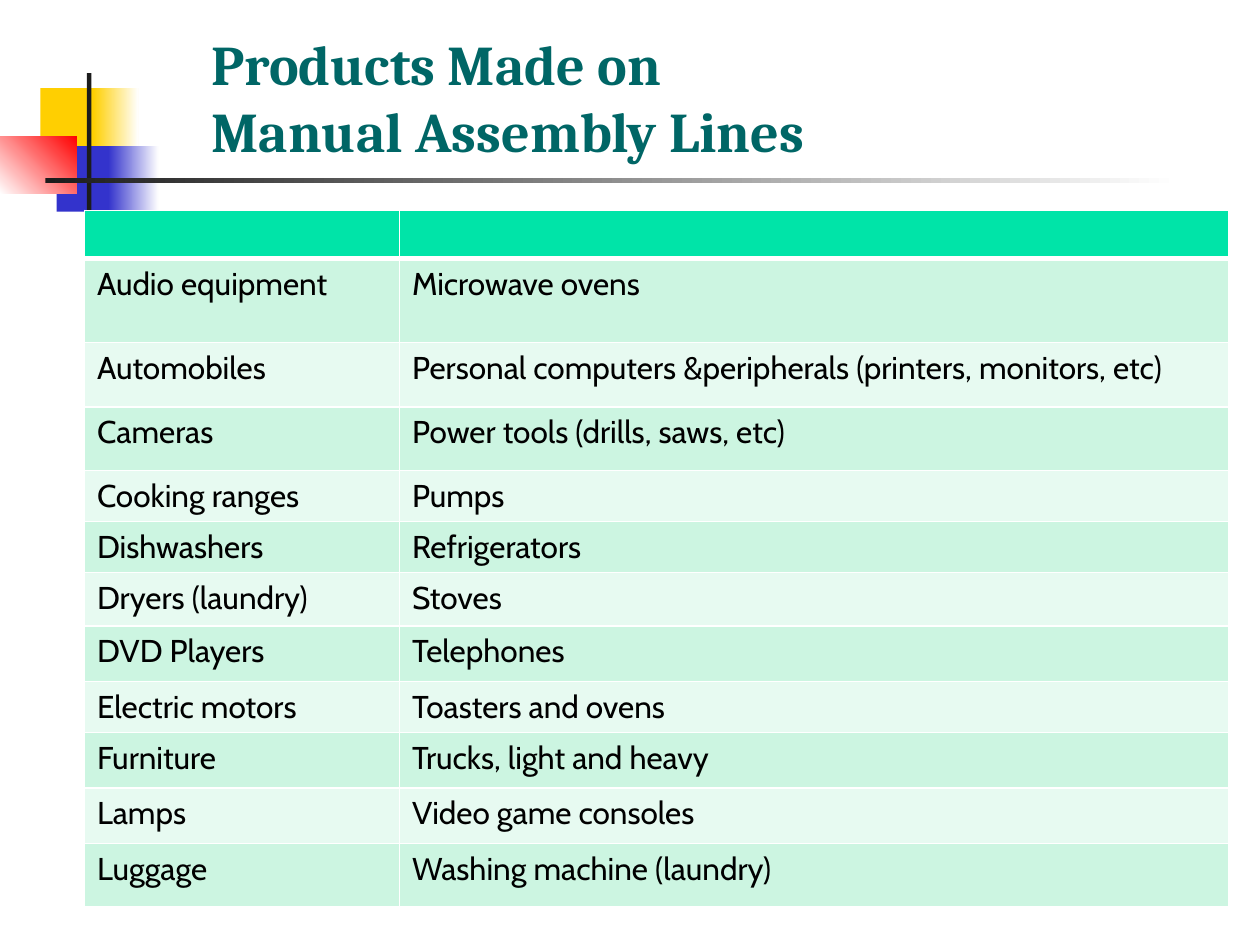
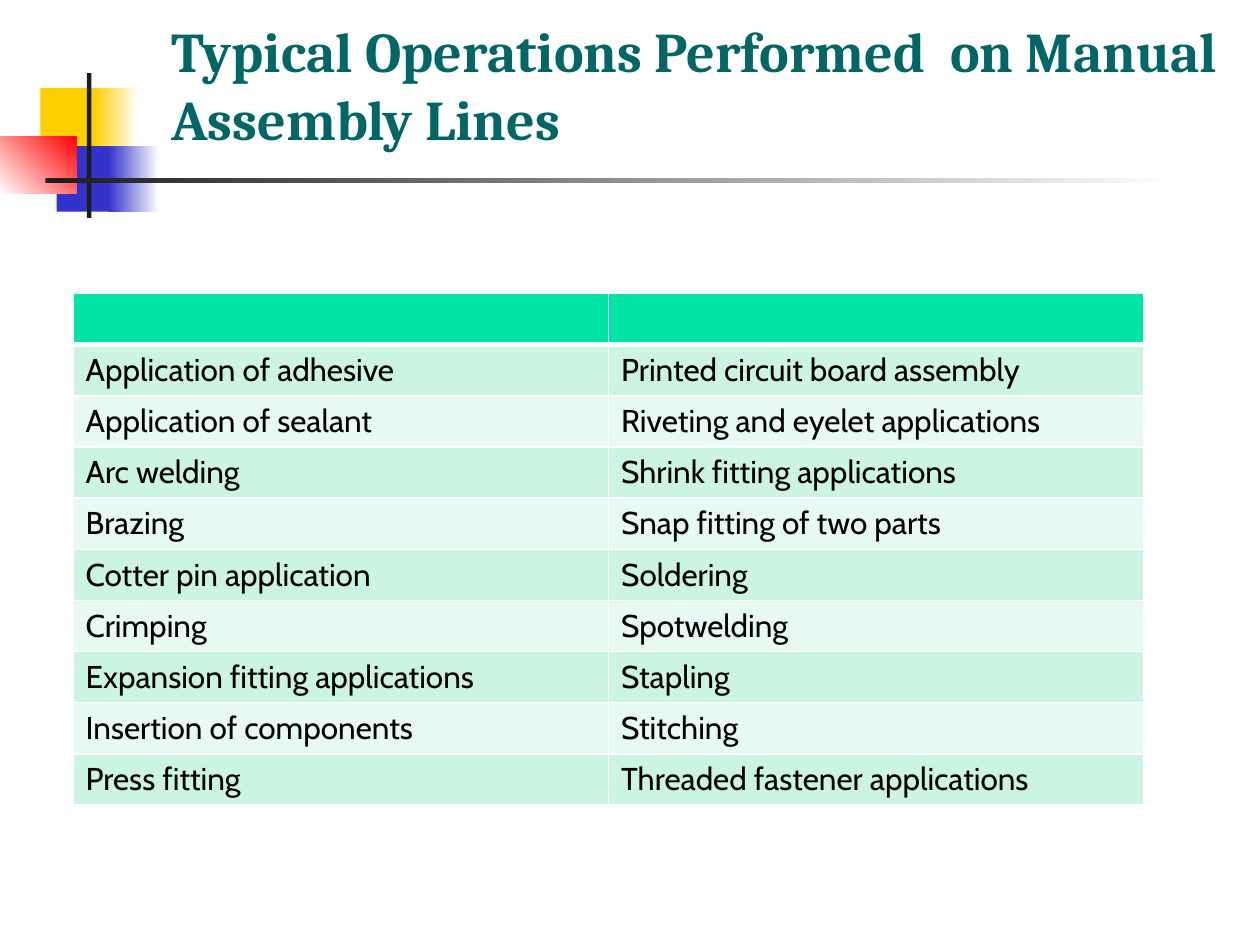
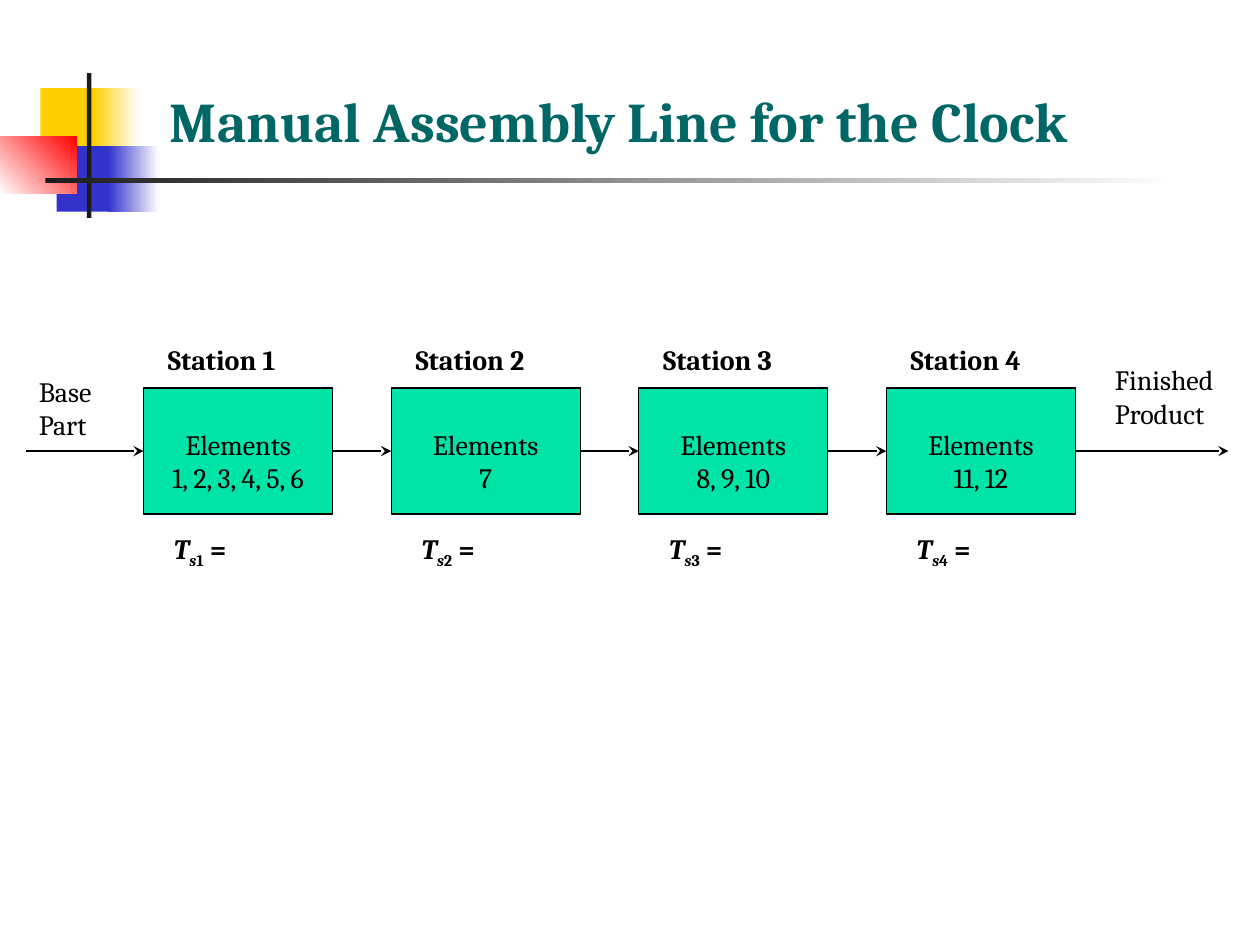
from lxml import etree
from pptx import Presentation
from pptx import util as u
from pptx.dml.color import RGBColor
from pptx.enum import shapes, text
from pptx.oxml import ns

BLACK, WHITE, INK = "000000", "FFFFFF", "1C1C1C"
GOLD, BLUE, RED = "FFCF01", "3333CC", "FF0000"
TEAL, GREEN, BANDS = "006666", "00E4A8", ("CCF5E1", "E7FAF1")
SERIF, SANS = "Cambria", "Cabin"

DECOR = [
    ((3.2, 7, 4.8, 5.2), (GOLD,), 0),
    ((7.4, 7, 3.6, 5.2), (GOLD, WHITE), 0),
    ((4.5, 11.6, 4.6, 5.2), (BLUE,), 0),
    ((8.6, 11.6, 4, 5.2), (BLUE, WHITE), 0),
    ((0, 10.8, 6.1, 4.6), (WHITE, RED), 45),
    ((6.9, 5.8, 0.35, 11.5), (INK,), 0),
    ((3.6, 14.15, 90, 0.35), (INK, WHITE), 0),
]

GOODS = [
    ("Audio equipment", "Microwave ovens"),
    ("Automobiles", "Personal computers &peripherals (printers, monitors, etc)"),
    ("Cameras", "Power tools (drills, saws, etc)"),
    ("Cooking ranges", "Pumps"),
    ("Dishwashers", "Refrigerators"),
    ("Dryers (laundry)", "Stoves"),
    ("DVD Players", "Telephones"),
    ("Electric motors", "Toasters and ovens"),
    ("Furniture", "Trucks, light and heavy"),
    ("Lamps", "Video game consoles"),
    ("Luggage", "Washing machine (laundry)"),
]

TASKS = [
    ("Application of adhesive", "Printed circuit board assembly"),
    ("Application of sealant", "Riveting and eyelet applications"),
    ("Arc welding", "Shrink fitting applications"),
    ("Brazing", "Snap fitting of two parts"),
    ("Cotter pin application", "Soldering"),
    ("Crimping", "Spotwelding"),
    ("Expansion fitting applications", "Stapling"),
    ("Insertion of components", "Stitching"),
    ("Press fitting", "Threaded fastener applications"),
]

STEPS = ["1, 2, 3, 4, 5, 6", "7", "8, 9, 10", "11, 12"]


def rgb(code):
    """Turn a hex string into a colour."""
    return RGBColor.from_string(code)


def grid(*cells):
    """Turn grid cells, 100 columns by 75 rows, into lengths."""
    return [u.Inches(cell / 10) for cell in cells]


def sub(node, tag, **attrs):
    """Append a drawing element to a node."""
    return etree.SubElement(node, ns.qn("a:" + tag), **attrs)


def write(para, words, size=16, font=SERIF, color=BLACK, bold=False,
          slant=False, base=0):
    """Add a run of text with its format to a paragraph."""
    run = para.add_run()
    run.text = words
    face = run.font
    face.size, face.name = u.Pt(size), font
    face.bold, face.italic = bold, slant
    face.color.rgb = rgb(color)
    if base:
        face._element.set("baseline", str(base * 1000))


def lines(frame, words, align=None, **form):
    """Write each line of the words as a paragraph."""
    for i, line in enumerate(words.split("\n")):
        para = frame.add_paragraph() if i else frame.paragraphs[0]
        para.alignment = align
        write(para, line, **form)


def border(cell, foot):
    """Give a cell white edges, with its own foot width."""
    props = cell._tc.get_or_add_tcPr()
    for i, (side, width) in enumerate(
            [("lnL", 1), ("lnR", 1), ("lnT", 1), ("lnB", foot)]):
        edge = etree.Element(ns.qn("a:" + side), w=str(u.Pt(width)))
        sub(sub(edge, "solidFill"), "srgbClr", val=WHITE)
        props.insert(i, edge)


class Deck:
    """Hold the style and the current slide."""

    def __init__(self):
        """Start an empty deck."""
        self.show = Presentation()
        self.show.slide_width, self.show.slide_height = grid(100, 75)

    def page(self, title, at):
        """Add a slide with the shared marks and a title."""
        self.slide = self.show.slides.add_slide(self.show.slide_layouts[6])
        for spot, fill, angle in DECOR:
            self.block(spot, *fill, angle=angle)
        frame = self.label(at, title, size=32, color=TEAL, bold=True)
        frame.vertical_anchor = text.MSO_ANCHOR.BOTTOM

    def block(self, at, *fill, angle=0, line=None):
        """Add a rectangle with a plain or graded fill."""
        box = self.slide.shapes.add_shape(
            shapes.MSO_SHAPE.RECTANGLE, *grid(*at))
        box.shadow.inherit = False
        if len(fill) > 1:
            box.fill.gradient()
            box.fill.gradient_angle = angle
            for stop, code in zip(box.fill.gradient_stops, fill):
                stop.color.rgb = rgb(code)
        else:
            box.fill.solid()
            box.fill.fore_color.rgb = rgb(fill[0])
        if line:
            box.line.color.rgb, box.line.width = rgb(line), u.Pt(0.75)
        else:
            box.line.fill.background()
        return box.text_frame

    def label(self, at, words="", **form):
        """Add a text box."""
        frame = self.slide.shapes.add_textbox(*grid(*at)).text_frame
        frame.word_wrap = True
        if words:
            lines(frame, words, **form)
        return frame

    def arrow(self, start, end, row):
        """Add a level arrow."""
        wire = self.slide.shapes.add_connector(
            shapes.MSO_CONNECTOR.STRAIGHT, *grid(start, row, end, row))
        wire.line.color.rgb, wire.line.width = rgb(BLACK), u.Pt(1.5)
        sub(wire.line._get_or_add_ln(), "tailEnd", type="stealth")
        sub(wire._element.spPr, "effectLst")

    def table(self, at, cols, rows, data):
        """Add a banded table under an empty head row."""
        spot = grid(*at, sum(cols), sum(rows))
        table = self.slide.shapes.add_table(len(rows), len(cols), *spot).table
        for col, width in zip(table.columns, grid(*cols)):
            col.width = width
        for row, height in zip(table.rows, grid(*rows)):
            row.height = height
        for r in range(len(rows)):
            for c in range(len(cols)):
                cell = table.cell(r, c)
                cell.fill.solid()
                cell.fill.fore_color.rgb = rgb(BANDS[(r - 1) % 2] if r else GREEN)
                border(cell, 1 if r else 3)
                if r:
                    lines(cell.text_frame, data[r - 1][c], size=18, font=SANS)
                else:
                    cell.margin_top = 0

    def station(self, num, left, step):
        """Add one work station with its heading and time."""
        frame = self.block((left, 30.8, 15, 10), GREEN, line=BLACK)
        frame.margin_top = u.Inches(0.31)
        frame.vertical_anchor = text.MSO_ANCHOR.TOP
        lines(frame, f"Elements\n{step}", align=text.PP_ALIGN.CENTER)
        self.label((left + 0.95, 26.7, 12.4, 3.7), f"Station {num}", bold=True)
        para = self.label((left + 1.4, 41.7, 8.8, 3.7)).paragraphs[0]
        write(para, "T", bold=True, slant=True)
        write(para, "s", bold=True, slant=True, base=-25)
        write(para, str(num), bold=True, base=-25)
        write(para, " =", bold=True)


def main():
    """Build the three slides."""
    deck = Deck()
    deck.page("Products Made on\nManual Assembly Lines", (15.8, 3.3, 81.9, 10.2))
    deck.table((6.7, 16.7), (25, 65.8),
               (3.8, 6.7, 5.1, 5.05, 4.05, 4.05, 4.25, 4.4, 4.05, 4.4, 4.4, 5),
               GOODS)

    deck.page("Typical Operations Performed  on Manual Assembly Lines",
              (12.6, 2.3, 85.2, 10.2))
    deck.table((5.8, 23.3), (42.5, 42.5), [4.06] * 10, TASKS)

    deck.page("Manual Assembly Line for the Clock", (12.5, 2.5, 85.8, 10.2))
    lefts = [11.4 + 19.65 * i for i in range(len(STEPS))]
    for num, (left, step) in enumerate(zip(lefts, STEPS), 1):
        deck.station(num, left, step)
    starts = [2.1] + [left + 15 for left in lefts]
    for start, end in zip(starts, lefts + [97.5]):
        deck.arrow(start, end, 35.8)
    deck.label((2.1, 29.2, 6.9, 6.4), "Base\nPart")
    deck.label((87.5, 28.3, 10.6, 6.4), "Finished\nProduct")
    deck.show.save("out.pptx")


if __name__ == "__main__":
    main()
